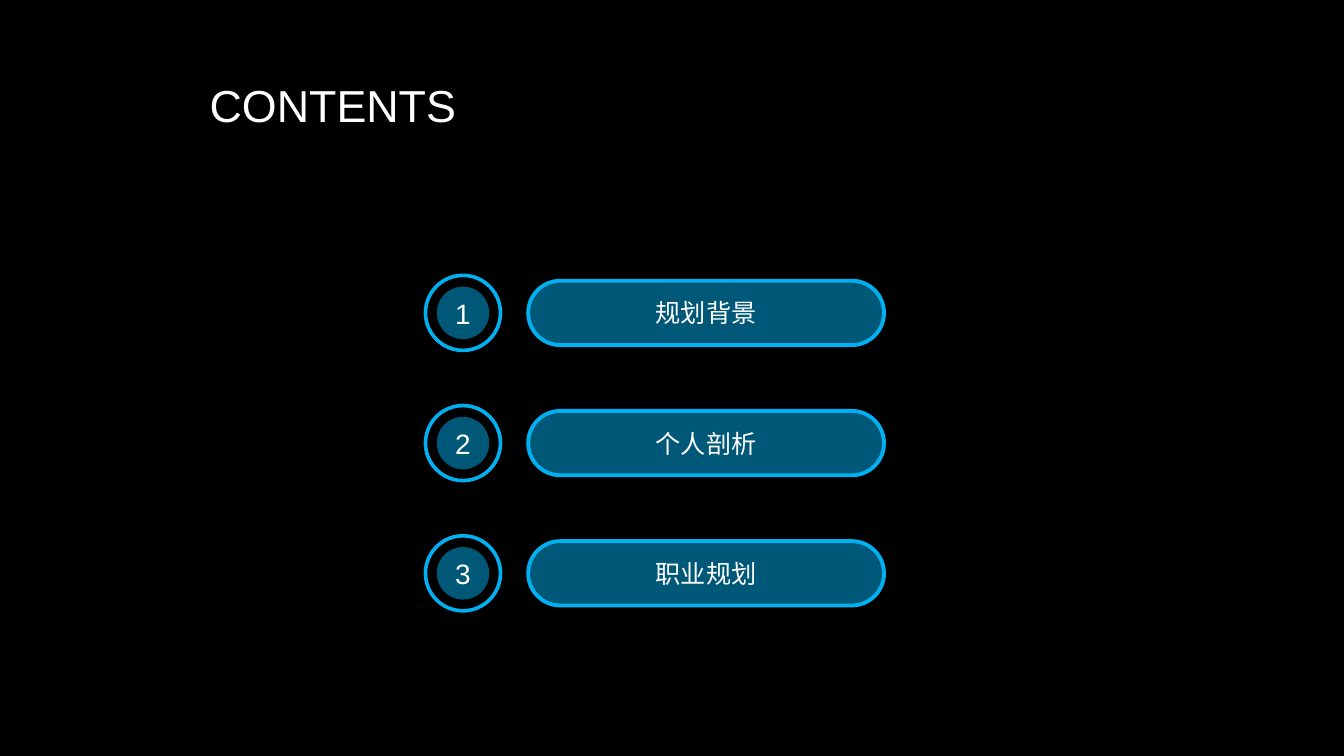
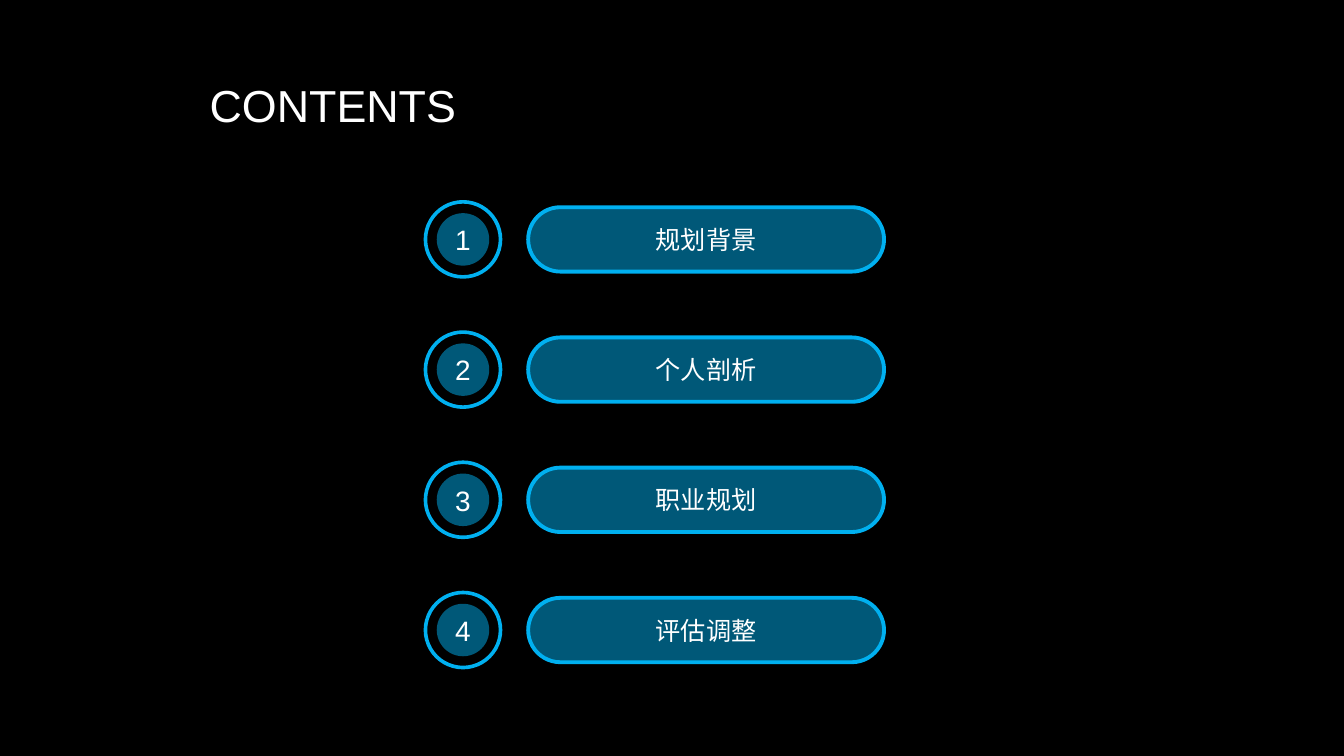
import pptx
import pptx.dml.color
import pptx.enum.shapes
import pptx.enum.text
import pptx.util

Pt = pptx.util.Pt
RGBColor = pptx.dml.color.RGBColor
Shape = pptx.enum.shapes.MSO_SHAPE
Align = pptx.enum.text.PP_ALIGN

BLACK = RGBColor(0x00, 0x00, 0x00)
WHITE = RGBColor(0xFF, 0xFF, 0xFF)
TEAL = RGBColor(0x00, 0x58, 0x78)
SKY = RGBColor(0x00, 0xB0, 0xF0)

ROW_PITCH = 93
TOPICS = ["规划背景", "个人剖析", "职业规划", "评估调整"]
# Number of topics on each slide and the centre height of its first row
AGENDAS = [(3, 223.5), (4, 171)]


class Deck:
    FONT = "Arial"
    TITLE_SIZE, NUMBER_SIZE, TOPIC_SIZE = 32, 20, 18
    BADGE_CENTER = 330.7
    RING_SIZE, RING_WIDTH, DISC_SIZE = 56.2, 2.6, 37.5
    PILL_CENTER, PILL_WIDTH, PILL_HEIGHT, PILL_LINE = 504.4, 254.2, 46, 2.75

    def __init__(self):
        self.presentation = pptx.Presentation()
        self.presentation.slide_width = Pt(960)
        self.presentation.slide_height = Pt(540)
        background = self.presentation.slide_master.background.fill
        background.solid()
        background.fore_color.rgb = BLACK
        self.slide = None

    def new_slide(self):
        blank = self.presentation.slide_layouts[6]
        self.slide = self.presentation.slides.add_slide(blank)

    def set_text(self, shape, text, size, alignment):
        frame = shape.text_frame
        frame.word_wrap = True
        frame.vertical_anchor = pptx.enum.text.MSO_ANCHOR.MIDDLE
        paragraph = frame.paragraphs[0]
        paragraph.text = text
        paragraph.alignment = alignment
        paragraph.font.name = self.FONT
        paragraph.font.size = Pt(size)
        paragraph.font.color.rgb = WHITE
        return paragraph

    def centered_shape(self, kind, x, y, width, height, color):
        """Add a plain filled shape around the centre x, y."""
        shape = self.slide.shapes.add_shape(
            kind, Pt(x - width / 2), Pt(y - height / 2), Pt(width), Pt(height))
        shape.shadow.inherit = False
        shape.fill.solid()
        shape.fill.fore_color.rgb = color
        shape.line.fill.background()
        return shape

    def title(self, text):
        box = self.slide.shapes.add_textbox(Pt(142.6), Pt(25.2), Pt(409.7), Pt(104.4))
        paragraph = self.set_text(box, text, self.TITLE_SIZE, Align.LEFT)
        paragraph.line_spacing = 0.9

    def badge(self, number, y):
        """Add a numbered disc inside a ring."""
        ring = self.centered_shape(Shape.DONUT, self.BADGE_CENTER, y,
                                   self.RING_SIZE, self.RING_SIZE, SKY)
        ring.adjustments[0] = self.RING_WIDTH / self.RING_SIZE
        disc = self.centered_shape(Shape.OVAL, self.BADGE_CENTER, y,
                                   self.DISC_SIZE, self.DISC_SIZE, TEAL)
        frame = disc.text_frame
        frame.margin_left = frame.margin_right = Pt(0)
        frame.margin_top = frame.margin_bottom = Pt(0)
        self.set_text(disc, str(number), self.NUMBER_SIZE, Align.CENTER)

    def pill(self, text, y):
        shape = self.centered_shape(Shape.ROUNDED_RECTANGLE, self.PILL_CENTER, y,
                                    self.PILL_WIDTH, self.PILL_HEIGHT, TEAL)
        shape.adjustments[0] = 0.5
        shape.line.color.rgb = SKY
        shape.line.width = Pt(self.PILL_LINE)
        self.set_text(shape, text, self.TOPIC_SIZE, Align.CENTER)


def main():
    deck = Deck()
    for topic_count, first_row in AGENDAS:
        deck.new_slide()
        for index, topic in enumerate(TOPICS[:topic_count]):
            y = first_row + index * ROW_PITCH
            deck.badge(index + 1, y)
            deck.pill(topic, y)
        deck.title("CONTENTS")
    deck.presentation.save("out.pptx")


if __name__ == "__main__":
    main()
